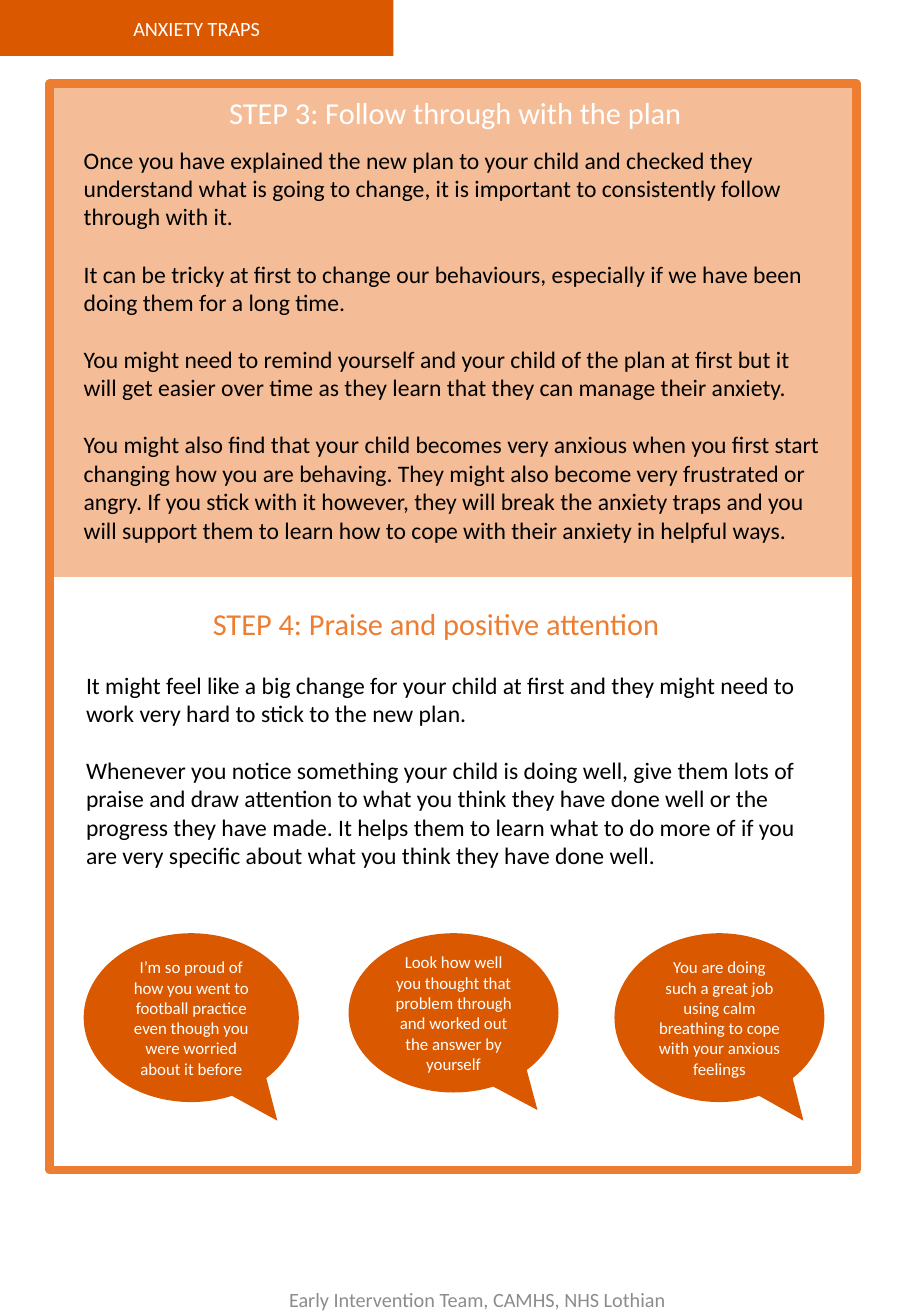
from lxml.etree import SubElement
from pptx import Presentation
from pptx.dml.color import RGBColor
from pptx.enum.shapes import MSO_SHAPE as Shape
from pptx.enum.text import MSO_ANCHOR as Anchor, PP_ALIGN as Align
from pptx.oxml.ns import qn
from pptx.util import Cm, Pt

COLORS = {"orange": "ED7D31", "dark": "DA5800", "white": "FFFFFF",
          "black": "000000", "grey": "8C8C8C"}
PAGE_W, PAGE_H = 19.05, 27.51

STEP_3 = [
    "Once you have explained the new plan to your child and checked they understand what "
    "is going to change, it is important to consistently follow through with it.",
    "It can be tricky at first to change our behaviours, especially if we have been doing "
    "them for a long time.",
    "You might need to remind yourself and your child of the plan at first but it will get "
    "easier over time as they learn that they can manage their anxiety.",
    "You might also find that your child becomes very anxious when you first start changing "
    "how you are behaving. They might also become very frustrated or angry. If you stick "
    "with it however, they will break the anxiety traps and you will support them to learn "
    "how to cope with their anxiety in helpful ways.",
]
STEP_4 = [
    "It might feel like a big change for your child at first and they might need to work "
    "very hard to stick to the new plan.",
    "Whenever you notice something your child is doing well, give them lots of praise and "
    "draw attention to what you think they have done well or the progress they have made. "
    "It helps them to learn what to do more of if you are very specific about what you "
    "think they have done well.",
]
# Praise text with bubble left, width and height
PRAISE = [
    ("I’m so proud of how you went to football practice even though you were worried "
     "about it before", 0, 4.5, 3.53),
    ("Look how well you thought that problem through and worked out the answer by "
     "yourself", 5.54, 4.39, 3.33),
    ("You are doing such a great job using calm breathing to cope with your anxious "
     "feelings", 11.1, 4.39, 3.53),
]


def rgb(name):
    return RGBColor.from_string(COLORS[name])


def write(shape, paragraphs, size, color, align=Align.CENTER, anchor=Anchor.MIDDLE, gap=0):
    frame = shape.text_frame
    frame.word_wrap = True
    frame.vertical_anchor = anchor
    for i, words in enumerate(paragraphs):
        paragraph = frame.paragraphs[0] if i == 0 else frame.add_paragraph()
        paragraph.text = words
        paragraph.alignment = align
        if i:
            paragraph.space_before = Pt(gap)
        paragraph.font.size = Pt(size)
        paragraph.font.name = "Calibri"
        paragraph.font.color.rgb = rgb(color)


def add_text(slide, box, paragraphs, size, color, **layout):
    label = slide.shapes.add_textbox(*map(Cm, box))
    write(label, paragraphs, size, color, **layout)


def add_block(slide, kind, box, fill=None):
    block = slide.shapes.add_shape(kind, *map(Cm, box))
    block.shadow.inherit = False
    block.line.fill.background()
    if fill:
        block.fill.solid()
        block.fill.fore_color.rgb = rgb(fill)
    else:
        block.fill.background()
    return block


def add_header(slide, box):
    write(add_block(slide, Shape.RECTANGLE, box, "dark"), ["ANXIETY TRAPS"], 12, "white")


def add_tint(slide, box):
    tint = add_block(slide, Shape.RECTANGLE, box, "orange")
    solid = tint.fill._xPr.find(qn("a:solidFill"))
    SubElement(solid[0], qn("a:alpha"), val="50000")


def add_frame(slide, box):
    border = add_block(slide, Shape.RECTANGLE, box)
    border.line.color.rgb = rgb("orange")
    border.line.width = Pt(5)


def add_step(slide, box, heading, color, paragraphs, body_left, body_top, body_width):
    left, top, width, height = box
    add_text(slide, (left, top, width, 1.02), [heading], 18, color, anchor=Anchor.TOP)
    body = (left + body_left, top + body_top, body_width, height - body_top)
    add_text(slide, body, paragraphs, 14, "black",
             align=Align.LEFT, anchor=Anchor.TOP, gap=17)


def add_praise(slide, left, top):
    for words, offset, width, height in PRAISE:
        bubble = add_block(slide, Shape.OVAL_CALLOUT,
                           (left + offset, top, width, height), "dark")
        bubble.adjustments[0] = 0.4
        bubble.adjustments[1] = 0.61
        write(bubble, [words], 10, "white")


def main():
    deck = Presentation()
    deck.slide_width, deck.slide_height = Cm(PAGE_W), Cm(PAGE_H)
    slide = deck.slides.add_slide(deck.slide_layouts[6])

    # Header and framed panel
    add_header(slide, (0, 0, 8.23, 1.17))
    add_tint(slide, (1.04, 1.75, 16.87, 10.31))
    add_frame(slide, (1.04, 1.75, 16.87, 22.71))

    # Steps
    add_step(slide, (1.04, 1.85, 16.97, 10.29), "STEP 3: Follow through with the plan",
             "white", STEP_3, 0.46, 1.07, 16.05)
    add_step(slide, (1.04, 12.52, 16.16, 5.82), "STEP 4: Praise and positive attention",
             "orange", STEP_4, 0.51, 1.37, 15.95)

    # Praise examples and footer
    add_praise(slide, 1.75, 19.51)
    add_text(slide, (5.54, 26.82, 8.89, 0.69),
             ["Early Intervention Team, CAMHS, NHS Lothian"], 12, "grey")
    deck.save("out.pptx")


if __name__ == "__main__":
    main()
